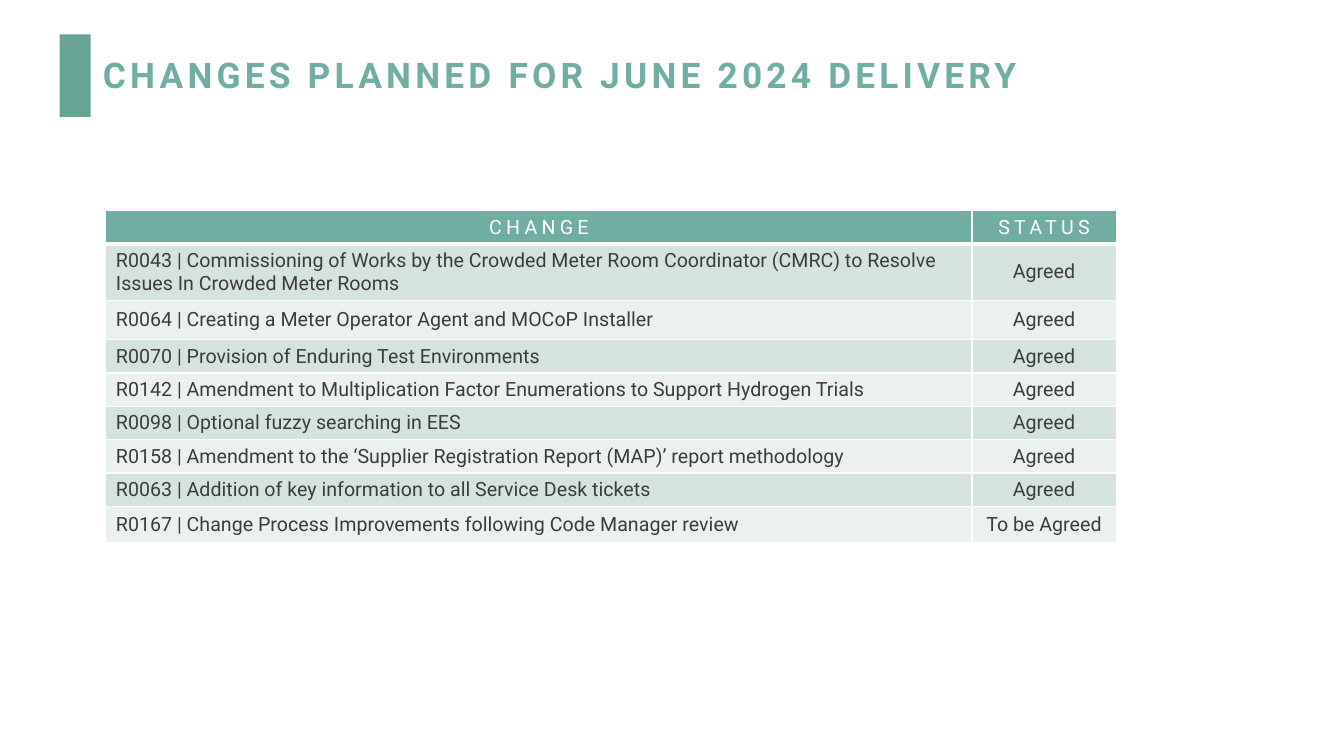
from lxml import etree
from pptx import Presentation
from pptx import util as u
from pptx.dml.color import RGBColor
from pptx.enum import shapes, text
from pptx.oxml import ns

# Colours
TEAL = RGBColor(0x70, 0xAD, 0xA3)
BAR = RGBColor(0x68, 0xA4, 0x95)
WHITE = RGBColor(0xFF, 0xFF, 0xFF)
DARK = RGBColor(0x3C, 0x3C, 0x3B)
BANDS = (RGBColor(0xD5, 0xE3, 0xE0), RGBColor(0xEB, 0xF1, 0xF0))

# Text formats
TITLE = {"size": u.Pt(25.2), "bold": True, "name": "Roboto"}
CELL = {"size": u.Pt(14), "bold": False, "name": "Roboto"}

# Table content
HEADINGS = ("CHANGE", "STATUS")
CHANGES = (
    ("R0043 | Commissioning of Works by the Crowded Meter Room Coordinator (CMRC) "
     "to Resolve Issues In Crowded Meter Rooms", "Agreed"),
    ("R0064 | Creating a Meter Operator Agent and MOCoP Installer", "Agreed"),
    ("R0070 | Provision of Enduring Test Environments", "Agreed"),
    ("R0142 | Amendment to Multiplication Factor Enumerations to Support Hydrogen Trials",
     "Agreed"),
    ("R0098 | Optional fuzzy searching in EES", "Agreed"),
    ("R0158 | Amendment to the ‘Supplier Registration Report (MAP)’ report methodology",
     "Agreed"),
    ("R0063 | Addition of key information to all Service Desk tickets", "Agreed"),
    ("R0167 | Change Process Improvements following Code Manager review", "To be Agreed"),
)
COLUMN_WIDTHS = (8.59, 1.43)
ROW_HEIGHT = 0.33
TALL_ROWS = {1: 0.56, 2: 0.39, 8: 0.36}


def write(tf, words, fmt, color, align, spacing=0):
    """Put one formatted run into a text frame."""
    p = tf.paragraphs[0]
    p.alignment = align
    r = p.add_run()
    r.text = words
    for name, value in fmt.items():
        setattr(r.font, name, value)
    r.font.color.rgb = color
    if spacing:
        r.font._element.set("spc", str(spacing * 100))
    return p


def add_bar(slide):
    sp = slide.shapes.add_shape(shapes.MSO_SHAPE.RECTANGLE, u.Inches(0.59),
                                u.Inches(0.34), u.Inches(0.31), u.Inches(0.82))
    sp.shadow.inherit = False
    sp.fill.solid()
    sp.fill.fore_color.rgb = BAR
    sp.line.fill.background()


def set_title(slide, words):
    sp = slide.shapes.title
    sp.left, sp.top = u.Inches(0.92), u.Inches(0.4)
    sp.width, sp.height = u.Inches(10.15), u.Inches(0.72)
    tf = sp.text_frame
    tf.auto_size = text.MSO_AUTO_SIZE.NONE
    tf.vertical_anchor = text.MSO_ANCHOR.MIDDLE
    p = write(tf, words, TITLE, TEAL, text.PP_ALIGN.LEFT, 3)
    p.line_spacing = 0.9


def set_borders(cell, bottom):
    tc_pr = cell._tc.get_or_add_tcPr()
    for side, width in (("L", 1), ("R", 1), ("T", 1), ("B", bottom)):
        ln = etree.SubElement(tc_pr, ns.qn(f"a:ln{side}"), w=str(u.Pt(width)))
        fill = etree.SubElement(ln, ns.qn("a:solidFill"))
        etree.SubElement(fill, ns.qn("a:srgbClr"), val=str(WHITE))


def add_changes_table(slide):
    rows = (HEADINGS, *CHANGES)
    heights = [TALL_ROWS.get(i, ROW_HEIGHT) for i in range(len(rows))]
    table = slide.shapes.add_table(
        len(rows), len(HEADINGS), u.Inches(1.05), u.Inches(2.09),
        u.Inches(sum(COLUMN_WIDTHS)), u.Inches(sum(heights))).table
    for column, width in zip(table.columns, COLUMN_WIDTHS):
        column.width = u.Inches(width)
    for i, (row, height) in enumerate(zip(rows, heights)):
        table.rows[i].height = u.Inches(height)
        header = i == 0
        for j, words in enumerate(row):
            cell = table.cell(i, j)
            cell.vertical_anchor = text.MSO_ANCHOR.MIDDLE
            set_borders(cell, 3 if header else 1)
            cell.fill.solid()
            cell.fill.fore_color.rgb = TEAL if header else BANDS[(i - 1) % 2]
            centred = header or j == 1
            write(cell.text_frame, words, CELL, WHITE if header else DARK,
                  text.PP_ALIGN.CENTER if centred else text.PP_ALIGN.LEFT,
                  3 if header else 0)


def main():
    prs = Presentation()
    prs.slide_width, prs.slide_height = u.Inches(13.33), u.Inches(7.5)
    slide = prs.slides.add_slide(prs.slide_layouts[5])
    # Heading
    add_bar(slide)
    set_title(slide, "CHANGES PLANNED FOR JUNE 2024 DELIVERY")
    # Planned changes and their status
    add_changes_table(slide)
    prs.save("out.pptx")


if __name__ == "__main__":
    main()
